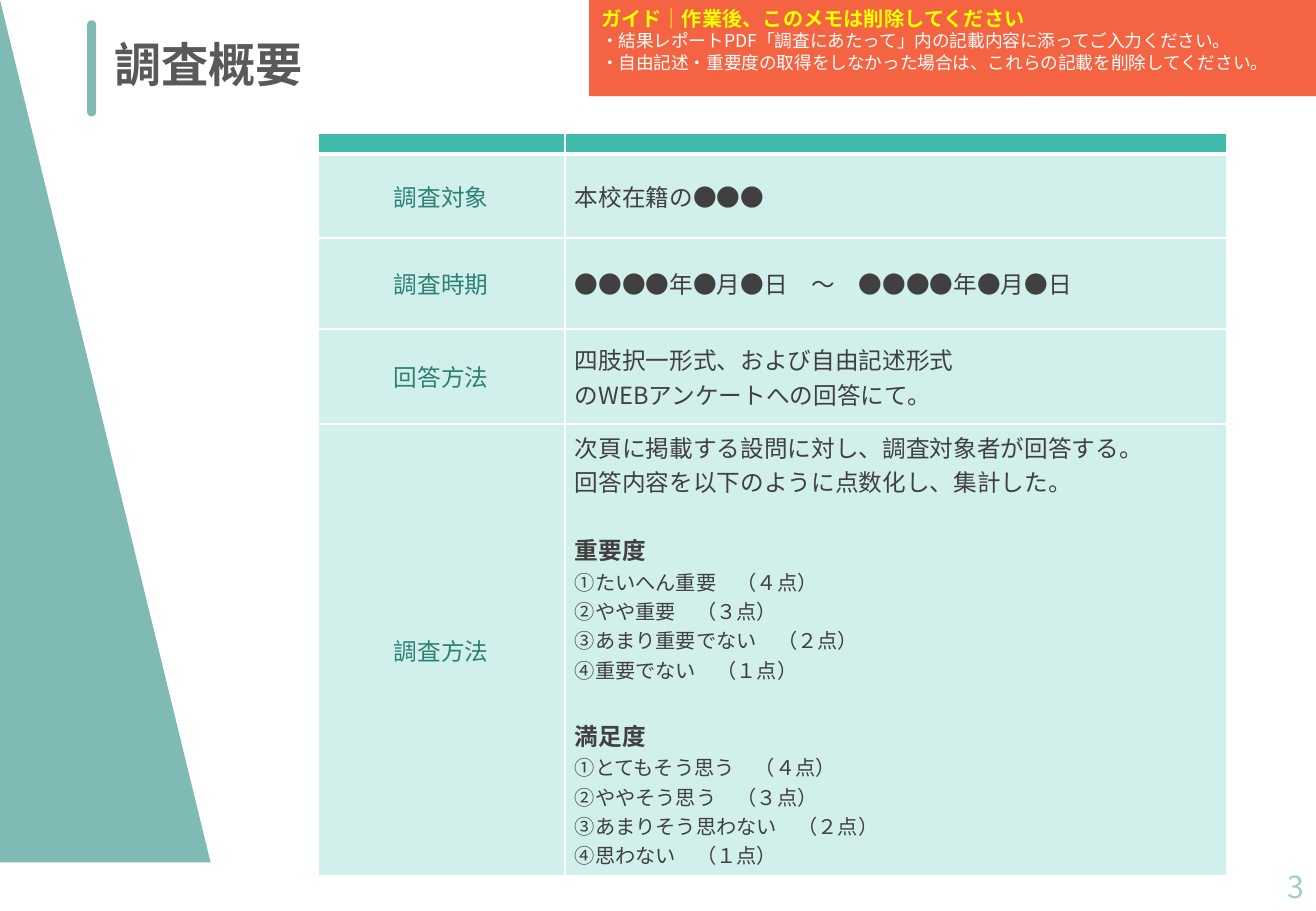
from dataclasses import dataclass
from lxml.etree import SubElement
from pptx import Presentation
from pptx.dml.color import RGBColor as RGB
from pptx.enum.shapes import MSO_SHAPE as SHAPE
from pptx.enum.text import MSO_ANCHOR as ANCHOR, MSO_AUTO_SIZE as AUTO, PP_ALIGN as ALIGN
from pptx.oxml.ns import qn
from pptx.util import Emu, Pt


@dataclass(frozen=True)
class Theme:
    font: str = "Noto Sans CJK JP"
    accent: str = "80BAB4"
    header: str = "40BAAB"
    cell: str = "D1EFEB"
    label: str = "2C8076"
    body: str = "404040"
    title: str = "595959"
    number: str = "A3CDC9"
    guide: str = "F46442"
    yellow: str = "FFFF00"
    white: str = "FFFFFF"
    title_size: float = 28
    number_size: float = 18
    body_size: float = 14
    small_size: float = 12
    note_size: float = 10.5


T = Theme()
ROW_HEIGHTS = [20, 83, 90, 94, 446]
COL_WIDTHS = [244, 654]
ROWS = [
    ("調査対象", ["本校在籍の●●●"]),
    ("調査時期", ["●●●●年●月●日　～　●●●●年●月●日"]),
    ("回答方法", ["四肢択一形式、および自由記述形式", "のWEBアンケートへの回答にて。"]),
    ("調査方法", ["次頁に掲載する設問に対し、調査対象者が回答する。",
              "回答内容を以下のように点数化し、集計した。"]),
]
SCALES = {
    "重要度": ["①たいへん重要　（４点）", "②やや重要　（３点）",
            "③あまり重要でない　（２点）", "④重要でない　（１点）"],
    "満足度": ["①とてもそう思う　（４点）", "②ややそう思う　（３点）",
            "③あまりそう思わない　（２点）", "④思わない　（１点）"],
}
NOTES = ["・結果レポートPDF「調査にあたって」内の記載内容に添ってご入力ください。",
         "・自由記述・重要度の取得をしなかった場合は、これらの記載を削除してください。"]


def px(n):
    return Emu(n * 7620)


def box(*lengths):
    return [px(n) for n in lengths]


def add_text(tf, text, size=T.body_size, color=T.body, bold=False,
             align=ALIGN.LEFT, before=0, spacing=1.0):
    p = tf.paragraphs[-1]
    if p.runs:
        p = tf.add_paragraph()
    p.alignment, p.space_before, p.line_spacing = align, Pt(before), spacing
    r = p.add_run()
    r.text = text
    r.font.size, r.font.bold, r.font.name = Pt(size), bold, T.font
    r.font.color.rgb = RGB.from_string(color)
    SubElement(r.font._element, qn("a:ea")).set("typeface", T.font)


def paint(sp, color):
    sp.shadow.inherit = False
    sp.fill.solid()
    sp.fill.fore_color.rgb = RGB.from_string(color)
    sp.line.fill.background()
    return sp


def add_triangle(s):
    fb = s.shapes.build_freeform(0, 0, scale=px(1))
    fb.add_line_segments([(0, 852), (208, 852)], close=True)
    paint(fb.convert_to_shape(), T.accent)


def add_title(s, text):
    bar = paint(s.shapes.add_shape(SHAPE.ROUNDED_RECTANGLE, *box(86, 20, 9, 95)), T.accent)
    bar.adjustments[0] = 0.5
    sp = s.shapes.title
    sp.left, sp.top, sp.width, sp.height = box(101, 37, 349, 78)
    tf = sp.text_frame
    tf.auto_size, tf.vertical_anchor = AUTO.NONE, ANCHOR.TOP
    add_text(tf, text, size=T.title_size, color=T.title, bold=True, spacing=0.85)


def add_number(s, text):
    tf = s.shapes.add_textbox(*box(1008, 852, 292, 48)).text_frame
    tf.word_wrap, tf.vertical_anchor = True, ANCHOR.MIDDLE
    add_text(tf, text, size=T.number_size, color=T.number, align=ALIGN.RIGHT)


def format_cell(cell, color, top=1, bottom=1):
    tcPr = cell._tc.get_or_add_tcPr()
    for side, width in (("L", 1), ("R", 1), ("T", top), ("B", bottom)):
        ln = SubElement(tcPr, qn(f"a:ln{side}"), w=str(Pt(width)))
        SubElement(SubElement(ln, qn("a:solidFill")), qn("a:srgbClr"), val=T.white)
    cell.fill.solid()
    cell.fill.fore_color.rgb = RGB.from_string(color)
    cell.vertical_anchor = ANCHOR.MIDDLE
    cell.margin_left = cell.margin_right = px(10)
    cell.margin_top = cell.margin_bottom = px(5)


def add_table(s):
    table = s.shapes.add_table(len(ROW_HEIGHTS), len(COL_WIDTHS), *box(
        314, 132, sum(COL_WIDTHS), sum(ROW_HEIGHTS))).table
    table.first_row = table.horz_banding = False
    for col, width in zip(table.columns, COL_WIDTHS):
        col.width = px(width)
    for row, height in zip(table.rows, ROW_HEIGHTS):
        row.height = px(height)
    for cell in table.rows[0].cells:
        format_cell(cell, T.header, bottom=3)
        cell.margin_top = cell.margin_bottom = 0
        cell.text_frame.paragraphs[0]._p.get_or_add_endParaRPr().set("sz", "100")
    for i, (label, lines) in enumerate(ROWS, 1):
        for cell in table.rows[i].cells:
            format_cell(cell, T.cell, top=3 if i == 1 else 1)
        add_text(table.cell(i, 0).text_frame, label, color=T.label, align=ALIGN.CENTER)
        for line in lines:
            add_text(table.cell(i, 1).text_frame, line)
    tf = table.cell(len(ROWS), 1).text_frame
    for heading, choices in SCALES.items():
        add_text(tf, heading, bold=True, before=20)
        for choice in choices:
            add_text(tf, choice, size=T.small_size)


def add_guide(s):
    sp = paint(s.shapes.add_shape(SHAPE.RECTANGLE, *box(582, 0, 718, 95)), T.guide)
    tf = sp.text_frame
    tf.word_wrap, tf.vertical_anchor = True, ANCHOR.TOP
    add_text(tf, "ガイド｜作業後、このメモは削除してください", size=T.small_size,
             color=T.yellow, bold=True)
    for note in NOTES:
        add_text(tf, note, size=T.note_size, color=T.white)


def main():
    prs = Presentation()
    prs.slide_width, prs.slide_height = box(1300, 900)
    s = prs.slides.add_slide(prs.slide_layouts[5])
    add_triangle(s)
    add_number(s, "3")
    add_title(s, "調査概要")
    add_table(s)
    add_guide(s)
    prs.save("out.pptx")


if __name__ == "__main__":
    main()
